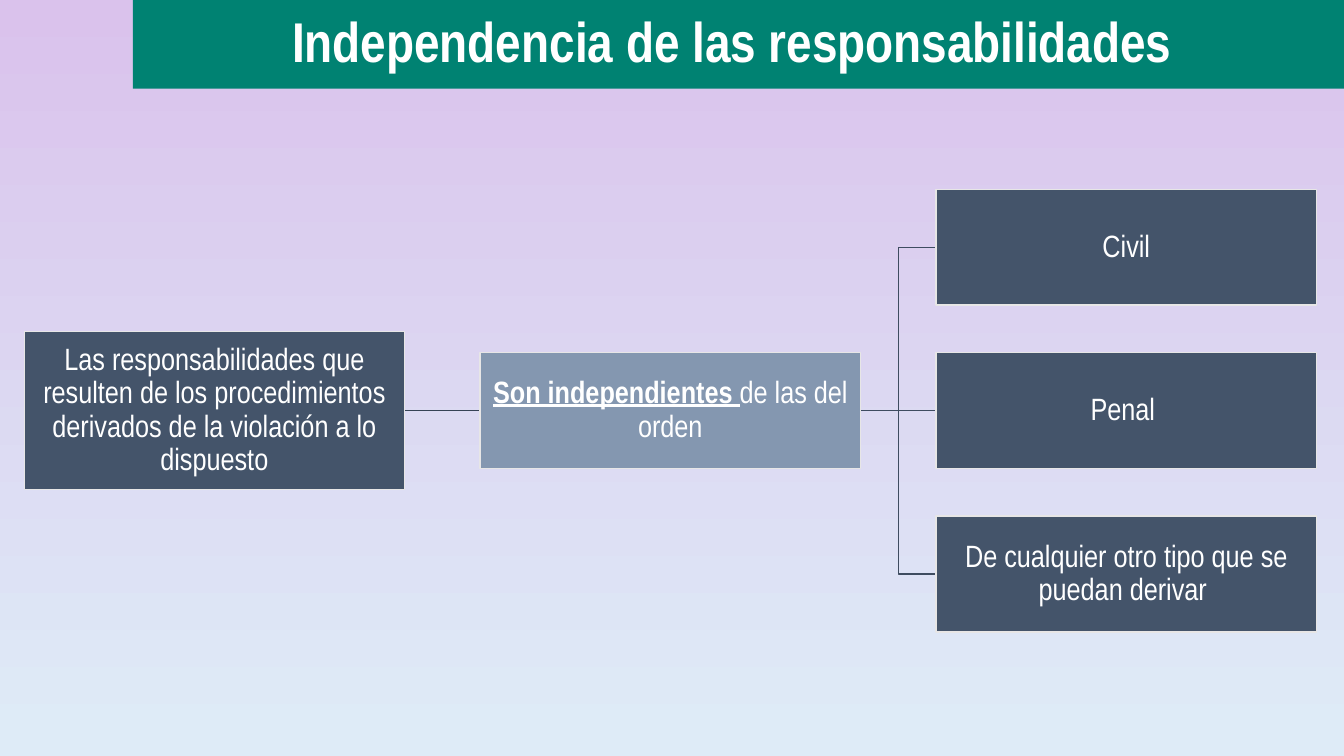
from lxml import etree
from pptx import Presentation
from pptx.dml.color import RGBColor
from pptx.enum.shapes import MSO_CONNECTOR as CONN, MSO_SHAPE as SHAPE
from pptx.enum.text import MSO_ANCHOR as ANCHOR, PP_ALIGN as ALIGN
from pptx.oxml.ns import qn
from pptx.util import Pt

GREEN = RGBColor(0x00, 0x82, 0x72)
WHITE = RGBColor(0xFF, 0xFF, 0xFF)
NAVY = RGBColor(0x44, 0x54, 0x6A)
STEEL = RGBColor(0x84, 0x97, 0xB0)
EDGE = RGBColor(0xE7, 0xE6, 0xE6)
ROOT_LINK = RGBColor(0x36, 0x43, 0x55)
BRANCH_LINK = RGBColor(0x3E, 0x4C, 0x60)
LILAC = RGBColor(0xDA, 0xC2, 0xEC)
SKY = RGBColor(0xDE, 0xEB, 0xF7)

ROOT = "Las responsabilidades que resulten de los procedimientos derivados de la violación a lo dispuesto"
BRANCHES = ["Civil", "Penal ", "De cualquier otro tipo que se puedan derivar "]


def set_attrs(obj, values):
    """Set each named attribute of an object."""
    for name, value in values.items():
        setattr(obj, name, value)


def paint_background(slide):
    """Fill the slide with a vertical gradient."""
    fill = slide.background.fill
    fill.gradient()
    fill.gradient_angle = 270
    for stop, color, position in zip(fill.gradient_stops, (LILAC, SKY), (0, 0.98)):
        stop.color.rgb = color
        stop.position = position


def add_box(slide, box, runs, fill, size, edge=None, inset=1.4):
    """Draw a filled rectangle with centred text made of (text, font values) runs."""
    sp = slide.shapes.add_shape(SHAPE.RECTANGLE, *map(Pt, box))
    sp.shadow.inherit = False
    sp.fill.solid()
    sp.fill.fore_color.rgb = fill
    if edge is None:
        sp.line.fill.background()
    else:
        sp.line.color.rgb = edge
        sp.line.width = Pt(1)
    tf = sp.text_frame
    margins = {f"margin_{side}": Pt(inset) for side in ("left", "top", "right", "bottom")}
    set_attrs(tf, {"word_wrap": True, "vertical_anchor": ANCHOR.MIDDLE, **margins})
    p = tf.paragraphs[0]
    set_attrs(p, {"alignment": ALIGN.CENTER, "line_spacing": 0.9})
    for text, values in runs:
        r = p.add_run()
        r.text = text
        set_attrs(r.font, {"name": "Arial Narrow", "size": Pt(size), **values})
        r.font.color.rgb = WHITE


def add_link(slide, start, end, color):
    """Join the right side of one box to the left side of another."""
    x1, y1 = start[0] + start[2], start[1] + start[3] / 2
    x2, y2 = end[0], end[1] + end[3] / 2
    kind = CONN.STRAIGHT if abs(y1 - y2) < 1 else CONN.ELBOW
    cn = slide.shapes.add_connector(kind, *map(Pt, (x1, y1, x2, y2)))
    cn.line.color.rgb = color
    cn.line.width = Pt(1)
    etree.SubElement(cn._element.spPr, qn("a:effectLst"))


def add_title(slide, box):
    """Place the title band."""
    runs = [("Independencia de las responsabilidades ", {"bold": True})]
    add_box(slide, box, runs, GREEN, 40, inset=4)


def add_tree(slide, box):
    """Lay out the root, the middle box and the three branches in the given box."""
    x, y, w, h = box
    box_w, box_h, root_h = 271.6, 82.8, 112.6
    col_step = (w - box_w) / 2
    row_step = (h - box_h) / (len(BRANCHES) - 1)
    mid = y + h / 2
    root = (x, mid - root_h / 2, box_w, root_h)
    hub = (x + col_step, mid - box_h / 2, box_w, box_h)
    leaves = [(x + 2 * col_step, y + i * row_step, box_w, box_h) for i in range(len(BRANCHES))]
    for leaf in leaves:
        add_link(slide, hub, leaf, BRANCH_LINK)
    add_link(slide, root, hub, ROOT_LINK)
    add_box(slide, root, [(ROOT, {})], NAVY, 22, EDGE)
    hub_runs = [("Son independientes ", {"bold": True, "underline": True}), ("de las del orden", {})]
    add_box(slide, hub, hub_runs, STEEL, 22, EDGE)
    for leaf, text in zip(leaves, BRANCHES):
        add_box(slide, leaf, [(text, {})], NAVY, 22, EDGE)


def main():
    """Build and save the slide."""
    prs = Presentation()
    set_attrs(prs, {"slide_width": Pt(960), "slide_height": Pt(540)})
    slide = prs.slides.add_slide(prs.slide_layouts[6])
    paint_background(slide)
    add_title(slide, (95, 0, 865, 63.4))
    add_tree(slide, (17.3, 135.2, 923, 316.2))
    prs.save("out.pptx")


if __name__ == "__main__":
    main()
